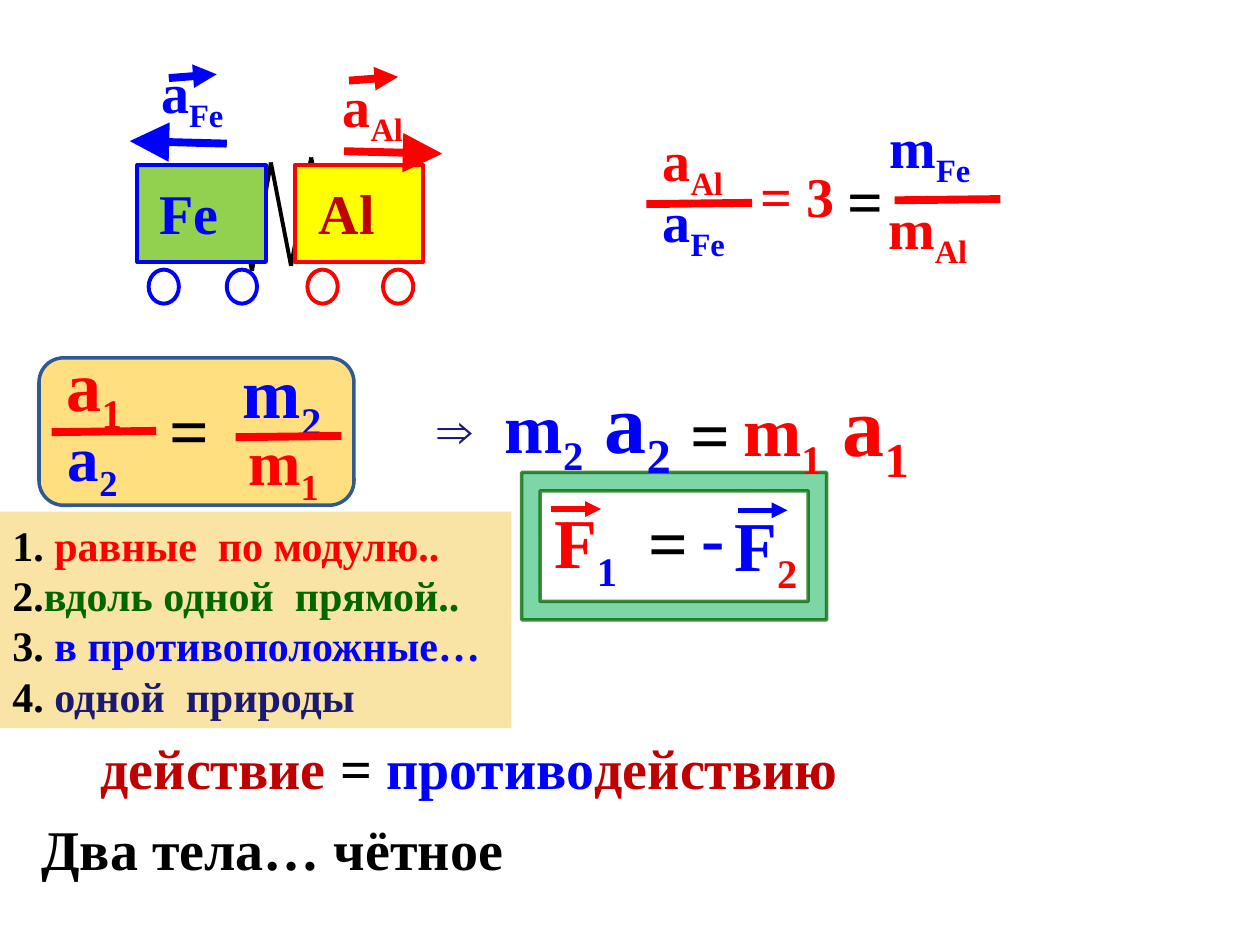
"""Build a slide on Newton's third law with two carts and formulas."""
import itertools
import pptx
import pptx.util
import pptx.dml.color
import pptx.enum.shapes
import pptx.enum.text
import pptx.oxml
import pptx.oxml.ns

Inches = pptx.util.Inches
Kind = pptx.enum.shapes.MSO_SHAPE
Anchor = pptx.enum.text.MSO_ANCHOR
RED, BLUE, BLACK = "FF0000", "0000FF", "000000"
DARK, GREEN, NAVY = "C00000", "006600", "1A1A70"
SUB = -25000

SPRING = [(1.84, 1.34), (2, 2.15), (2.15, 1.29), (2.31, 2.11), (2.47, 1.25), (2.63, 2.07)]

CARTS = [
    (1.09, "92D050", BLUE, (1.18, 1.8), (1.17, 0.68), "Fe", BLUE),
    (2.34, "FFFF00", RED, (2.44, 3.04), (2.43, 0.65), "Al", DARK),
]

PANELS = [
    (Kind.ROUNDED_RECTANGLE, (0.31, 2.84, 2.5, 1.17), "FFC000", 50, "2E5992", 100),
    (Kind.FRAME, (4.14, 3.75, 2.42, 1.17), "00B050", 51, GREEN, 74),
]

LABELS = [
    ((5.16, 0.95, 1.05, 0.87), [("a", 32, RED), ("Al", 32, RED, SUB)]),
    ((5.16, 1.43, 0.93, 0.69), [("a", 32, BLUE), ("Fe", 32, BLUE, SUB)]),
    ((1.18, 0.41, 0.93, 0.58), [("a", 32, BLUE), ("Fe", 32, BLUE, SUB)]),
    ((2.62, 0.52, 1.05, 0.87), [("a", 32, RED), ("Al", 32, RED, SUB)]),
    ((6.96, 0.84, 1.23, 0.87), [("m", 32, BLUE), ("Fe", 32, BLUE, SUB)]),
    ((6.95, 1.49, 1.09, 0.66), [("m", 32, RED), ("Al", 32, RED, SUB)]),
    ((5.83, 1.23, 1.17, 0.81), [(" = 3", 32, RED)]),
    ((6.63, 1.23, 0.84, 0.81), [("=", 36, BLACK)]),
    ((1.25, 3.02, 0.81, 0.81), [("=", 40, BLACK)]),
    ((0.43, 2.66, 1.05, 0.87), [("a", 40, RED), ("1", 40, RED, SUB)]),
    ((0.44, 3.27, 0.93, 0.8), [("a", 36, BLUE), ("2", 36, BLUE, SUB)]),
    ((1.83, 2.72, 1.23, 0.84), [("m", 40, BLUE), ("2", 40, BLUE, SUB)]),
    ((1.87, 3.3, 1.09, 0.89), [("m", 36, RED), ("1", 36, RED, SUB)]),
    ((3.91, 2.88, 1.7, 0.84),
     [("m", 40, BLUE), ("2", 40, BLUE, SUB), (" a", 48, BLUE), ("2", 48, BLUE, SUB)]),
    ((5.38, 3.05, 0.81, 0.81), [("=", 40, BLACK)]),
    ((5.8, 2.91, 1.7, 0.84),
     [("m", 40, RED), ("1", 40, RED, SUB), (" a", 48, RED), ("1", 48, RED, SUB)]),
    ((4.3, 3.91, 0.86, 0.84), [("F", 40, RED), ("1", 40, BLUE, SUB)]),
    ((5.05, 3.91, 0.81, 0.81), [("=", 40, BLACK)]),
    ((5.73, 3.93, 0.86, 0.84), [("F", 40, BLUE), ("2", 40, RED, SUB)]),
    ((5.47, 3.87, 0.55, 0.81), [("-", 40, BLUE)]),
]

BARS = [
    ((5.13, 1.62), (5.97, 1.61)),
    ((7.1, 1.59), (7.94, 1.58)),
    ((0.41, 3.43), (1.24, 3.42)),
    ((1.87, 3.47), (2.71, 3.46)),
]

ARROWS = [
    ((2.73, 1.2), (3.51, 1.22), RED, 4.5, "lg"),
    ((1.8, 1.14), (1.03, 1.12), BLUE, 4.5, "lg"),
    ((1.34, 0.62), (1.72, 0.59), BLUE, 4.5, "med"),
    ((2.77, 0.64), (3.16, 0.61), RED, 4.5, "med"),
    ((5.86, 4.05), (6.25, 4.05), BLUE, 3, "med"),
    ((4.37, 4.04), (4.77, 4.04), RED, 3, "med"),
]

RULES = [
    [("1. ", 24, BLACK), ("равные  по модулю..", 24, RED)],
    [("2.", 24, BLACK), ("вдоль одной  прямой..", 24, GREEN)],
    [("3. ", 24, BLACK), ("в противоположные…", 24, BLUE)],
    [("4. ", 24, BLACK), ("одной  природы", 24, NAVY)],
]

CLOSING = [
    ((0.7, 5.77, 6.09, 0.64), [("действие ", 32, DARK), ("= ", 32, BLACK),
                               ("противо", 32, BLUE), ("действию", 32, DARK)]),
    ((0.23, 6.41, 4.45, 0.64), [("Два тела… чётное", 32, BLACK)]),
]


def rgb(code):
    return pptx.dml.color.RGBColor.from_string(code)


def put(item, **vals):
    for name, val in vals.items():
        setattr(item, name, val)


def node(parent, tag, **vals):
    item = pptx.oxml.parse_xml(f"<a:{tag} {pptx.oxml.ns.nsdecls('a')}/>")
    for name, val in vals.items():
        item.set(name, str(val))
    parent.append(item)


def fade(item, part, pct):
    if pct < 100:
        for clr in item._element.spPr.xpath(part + "/a:srgbClr"):
            node(clr, "alpha", val=pct * 1000)


def shape(kind, box, fill, line=None, width=2.25):
    item = slide.shapes.add_shape(kind, *map(Inches, box))
    item.shadow.inherit = False
    item.fill.solid()
    item.fill.fore_color.rgb = rgb(fill)
    if line:
        item.line.color.rgb = rgb(line)
        item.line.width = pptx.util.Pt(width)
    else:
        item.line.fill.background()
    return item


def write(item, paras, **frame):
    put(item.text_frame, **{"word_wrap": True, **frame})
    for num, runs in enumerate(paras):
        para = item.text_frame.paragraphs[0] if num == 0 else item.text_frame.add_paragraph()
        para.alignment = pptx.enum.text.PP_ALIGN.LEFT
        for words, size, color, *base in runs:
            run = para.add_run()
            run.text = words
            put(run.font, name="Times New Roman", size=pptx.util.Pt(size), bold=True)
            run.font.color.rgb = rgb(color)
            if base:
                run._r.get_or_add_rPr().set("baseline", str(base[0]))


def label(box, runs, **frame):
    write(slide.shapes.add_textbox(*map(Inches, box)), [runs], **frame)


def line(start, end, color, width, head=None):
    item = slide.shapes.add_connector(
        pptx.enum.shapes.MSO_CONNECTOR.STRAIGHT, *map(Inches, start + end))
    item.line.color.rgb = rgb(color)
    item.line.width = pptx.util.Pt(width)
    if head:
        node(item.line._get_or_add_ln(), "tailEnd", type="triangle", w=head, len=head)
    node(item._element.spPr, "effectLst")


deck = pptx.Presentation()
put(deck, slide_width=Inches(10), slide_height=Inches(7.5))
slide = deck.slides.add_slide(deck.slide_layouts[6])

for kind, box, fill, clear, edge, dim in PANELS:
    item = shape(kind, box, fill, edge, 2)
    fade(item, "a:solidFill", clear)
    fade(item, "a:ln/a:solidFill", dim)

for start, end in itertools.pairwise(SPRING):
    line(start, end, BLACK, 2.25)

for left, fill, edge, wheels, (x, wide), name, ink in CARTS:
    shape(Kind.RECTANGLE, (left, 1.31, 1.02, 0.77), fill, edge)
    for wheel in wheels:
        shape(Kind.OVAL, (wheel, 2.14, 0.24, 0.27), "FFFFFF", edge)
    label((x, 1.37, wide, 0.64), [(name, 32, ink)], word_wrap=False)

for box, runs in LABELS:
    label(box, runs)
label((3.37, 3.12, 0.69, 0.57), [("⇒", 28, NAVY)], word_wrap=False)

for start, end in BARS:
    line(start, end, RED, 4.5)
for arrow in ARROWS:
    line(*arrow)

for box, runs in CLOSING:
    label(box, runs, vertical_anchor=Anchor.MIDDLE)
write(shape(Kind.RECTANGLE, (0, 4.06, 4.06, 1.72), "F9E3A5"), RULES,
      vertical_anchor=Anchor.MIDDLE)

deck.save("out.pptx")
